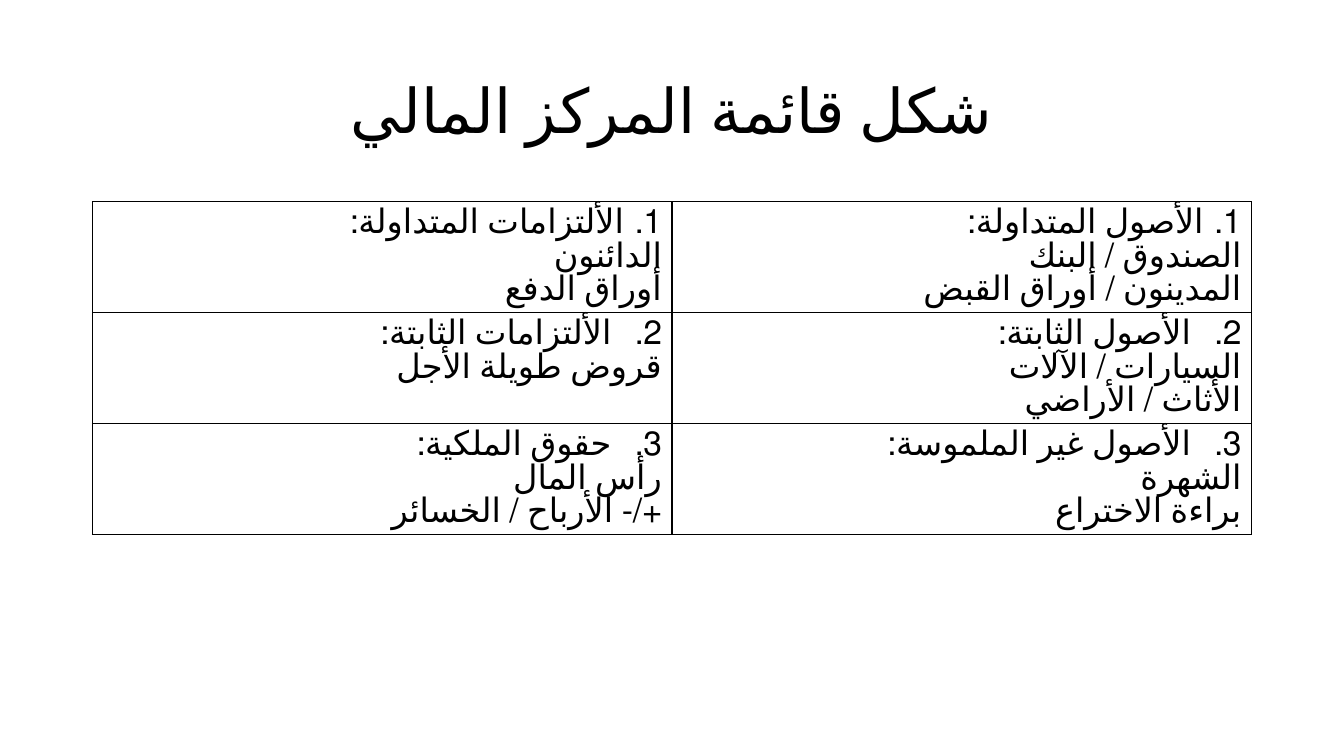
from dataclasses import dataclass

from lxml.etree import SubElement
from pptx import Presentation
from pptx.dml.color import RGBColor
from pptx.enum.lang import MSO_LANGUAGE_ID
from pptx.enum.text import MSO_ANCHOR, PP_ALIGN
from pptx.oxml.ns import qn
from pptx.slide import Slide
from pptx.table import _Cell
from pptx.util import Cm, Pt

COLORS = {"text": "000000", "border": "000000"}
FONT = "Calibri"
LEFT, WIDTH = Cm(2.33), Cm(29.21)
ROW_HEIGHT = Cm(2.79)


@dataclass(frozen=True)
class Section:
    heading: str
    items: tuple[str, ...]


LIABILITIES = [
    Section("الألتزامات المتداولة:", ("الدائنون", "أوراق الدفع")),
    Section("الألتزامات الثابتة:", ("قروض طويلة الأجل",)),
    Section("حقوق الملكية:", ("رأس المال", "+/- الأرباح / الخسائر")),
]
ASSETS = [
    Section("الأصول المتداولة:", ("الصندوق / البنك", "المدينون / أوراق القبض")),
    Section("الأصول الثابتة:", ("السيارات / الآلات", "الأثاث / الأراضي")),
    Section("الأصول غير الملموسة:", ("الشهرة", "براءة الاختراع")),
]


def format_paragraph(p, size: int, align: PP_ALIGN) -> None:
    """Set font, language, alignment and right-to-left direction."""
    p.alignment = align
    p.font.name = FONT
    p.font.size = Pt(size)
    p.font.color.rgb = RGBColor.from_string(COLORS["text"])
    p._p.get_or_add_pPr().set("rtl", "1")
    for r in p.runs:
        r.font.language_id = MSO_LANGUAGE_ID.ARABIC


def number_paragraph(p, number: int) -> None:
    """Give the paragraph an automatic number with a hanging indent."""
    indent = Cm(0.95 if number == 1 else 1.27)
    pPr = p._p.get_or_add_pPr()
    pPr.set("marL", str(indent))
    pPr.set("indent", str(-indent))
    bullet = pPr.makeelement(qn("a:buAutoNum"), {"type": "arabicPeriod"})
    if number > 1:
        bullet.set("startAt", str(number))
    pPr.insert(0, bullet)


def add_borders(cell: _Cell) -> None:
    tcPr = cell._tc.get_or_add_tcPr()
    for side in ("L", "R", "T", "B"):
        line = SubElement(tcPr, qn(f"a:ln{side}"), w=str(Pt(1)))
        fill = SubElement(line, qn("a:solidFill"))
        SubElement(fill, qn("a:srgbClr"), val=COLORS["border"])


def fill_cell(cell: _Cell, section: Section, number: int) -> None:
    add_borders(cell)
    cell.fill.background()
    tf = cell.text_frame
    tf.text = "\n".join((section.heading, *section.items))
    for p in tf.paragraphs:
        format_paragraph(p, 24, PP_ALIGN.RIGHT)
    number_paragraph(tf.paragraphs[0], number)


def add_title(s: Slide, text: str) -> None:
    title = s.shapes.title
    title.left, title.top, title.width, title.height = LEFT, Cm(1.01), WIDTH, Cm(3.68)
    tf = title.text_frame
    tf.text = text
    tf.vertical_anchor = MSO_ANCHOR.MIDDLE
    p = tf.paragraphs[0]
    format_paragraph(p, 44, PP_ALIGN.CENTER)
    p.line_spacing = 0.9


def add_balance_sheet(s: Slide, columns: list[list[Section]]) -> None:
    rows = len(columns[0])
    table = s.shapes.add_table(
        rows, len(columns), LEFT, Cm(5.08), WIDTH, ROW_HEIGHT * rows
    ).table
    table.first_row = table.horz_banding = False
    for col, sections in enumerate(columns):
        for row, section in enumerate(sections):
            fill_cell(table.cell(row, col), section, row + 1)


def main() -> None:
    prs = Presentation()
    prs.slide_width, prs.slide_height = Cm(33.87), Cm(19.05)
    s = prs.slides.add_slide(prs.slide_layouts[5])
    add_title(s, "شكل قائمة المركز المالي")
    add_balance_sheet(s, [LIABILITIES, ASSETS])
    prs.save("out.pptx")


if __name__ == "__main__":
    main()
